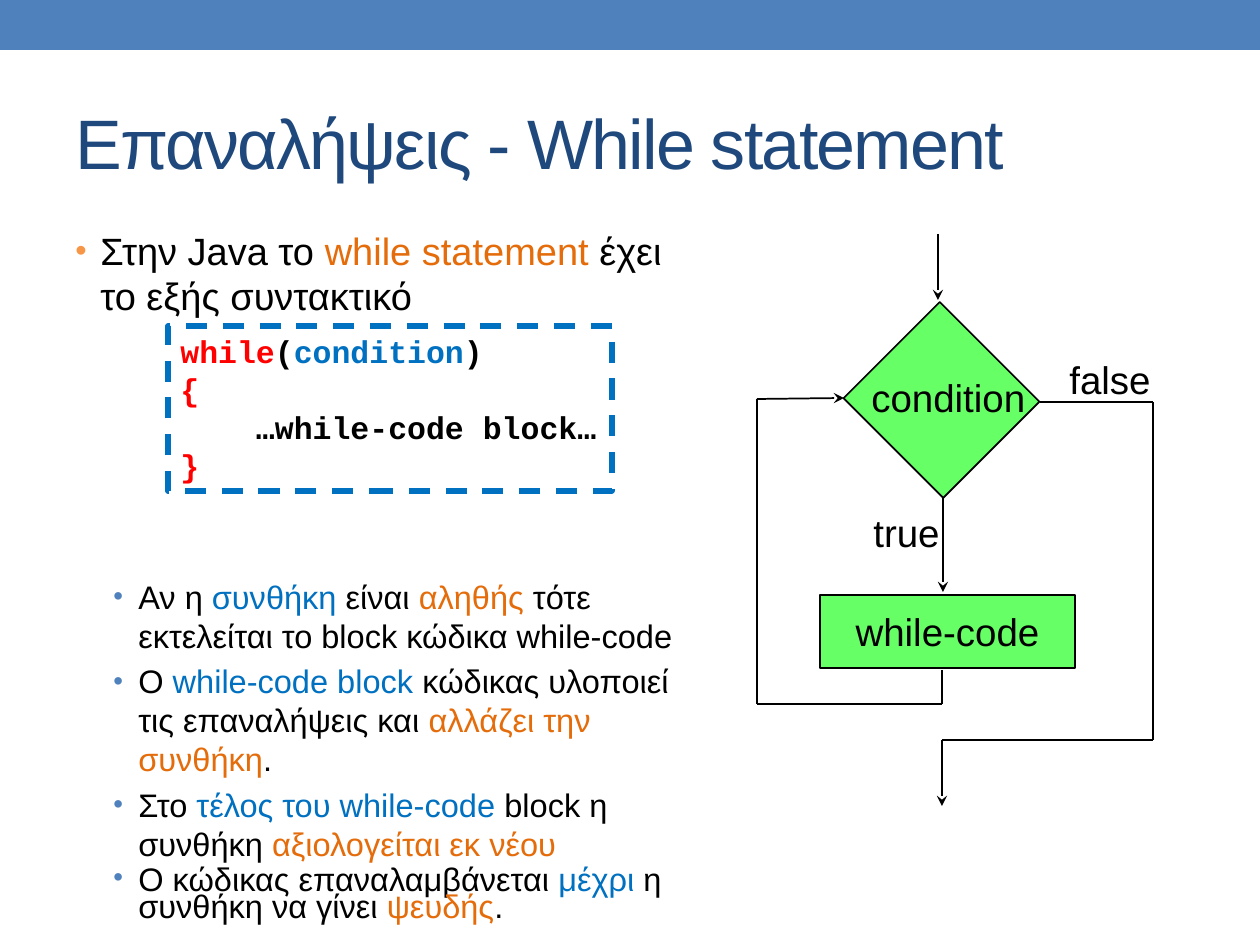
"""Build a slide on the while statement, with its syntax and flow chart."""
from lxml import etree
from pptx import Presentation, util as u
from pptx.dml.color import RGBColor
from pptx.enum import dml, shapes, text
from pptx.oxml.ns import qn

PX = 914400 / 126
COLORS = {"bar": "4F81BD", "title": "1F497D", "black": "000000", "orange": "E46C0A",
          "blue": "0070C0", "red": "FF0000", "green": "66FF66", "bullet": "F79646"}

TITLE = [[("Επαναλήψεις - While statement", "title")]]
INTRO = [("Στην Java το ", "black"), ("while statement ", "orange"),
         ("έχει το εξής συντακτικό", "black")]
POINTS = [
    [("Αν η ", "black"), ("συνθήκη", "blue"), (" είναι ", "black"), ("αληθής ", "orange"),
     ("τότε εκτελείται το block κώδικα while-code", "black")],
    [("O ", "black"), ("while-code block ", "blue"),
     ("κώδικας υλοποιεί τις επαναλήψεις και ", "black"),
     ("αλλάζει την συνθήκη", "orange"), (".", "black")],
    [("Στο ", "black"), ("τέλος του while-code ", "blue"), ("block η συνθήκη ", "black"),
     ("αξιολογείται εκ νέου", "orange")],
    [("Ο κώδικας επαναλαμβάνεται ", "black"), ("μέχρι", "blue"),
     (" η συνθήκη να γίνει ", "black"), ("ψευδής", "orange"), (".", "black")],
]
CODE = [
    [("while", "red"), ("(", "black"), ("condition", "blue"), (")", "black")],
    [("{", "red")],
    [("    …while-code block…", "black")],
    [("}", "red")],
]
LABELS = [("condition", (859, 368, 181, 59)), ("false", (1057, 350, 108, 59)),
          ("true", (861, 503, 93, 59))]
LINES = [
    ((1040, 402), (1153, 402)), ((1153, 402), (1153, 740)), ((1153, 740), (942, 740)),
    ((942, 670), (942, 704)), ((942, 704), (757, 704)), ((757, 704), (757, 399)),
]
ARROWS = [((938, 234), (938, 300)), ((943, 498), (943, 592)),
          ((757, 399), (844, 398)), ((942, 740), (942, 806))]


def px(n):
    return u.Emu(round(n * PX))


def rgb(name):
    return RGBColor.from_string(COLORS[name])


def write(s, paragraphs, size, font="Arial", bold=False, align="LEFT", anchor="TOP",
          wrap=True, tracking=None):
    tf = s.text_frame
    tf.word_wrap = wrap
    tf.vertical_anchor = getattr(text.MSO_ANCHOR, anchor)
    tf.margin_left = tf.margin_right = u.Inches(0.1)
    tf.margin_top = tf.margin_bottom = u.Inches(0.05)
    for i, runs in enumerate(paragraphs):
        p = tf.paragraphs[0] if i == 0 else tf.add_paragraph()
        p.alignment = getattr(text.PP_ALIGN, align)
        for words, color in runs:
            r = p.add_run()
            r.text = words
            r.font.name, r.font.size, r.font.bold = font, u.Pt(size), bold
            r.font.color.rgb = rgb(color)
            if tracking:
                r._r.get_or_add_rPr().set("spc", str(tracking * 100))
    return tf


def bullet(p, color, left, before):
    p.space_before = u.Pt(before)
    pPr = p._p.get_or_add_pPr()
    pPr.set("marL", str(px(left)))
    pPr.set("indent", str(px(-25)))
    clr = etree.SubElement(pPr, qn("a:buClr"))
    etree.SubElement(clr, qn("a:srgbClr"), val=COLORS[color])
    etree.SubElement(pPr, qn("a:buSzPct"), val="85000")
    etree.SubElement(pPr, qn("a:buFont"), typeface="Arial")
    etree.SubElement(pPr, qn("a:buChar"), char="•")


def textbox(slide, box):
    return slide.shapes.add_textbox(*map(px, box))


def rect(slide, box, fill=None, line=None, width=1):
    s = slide.shapes.add_shape(shapes.MSO_SHAPE.RECTANGLE, *map(px, box))
    s.shadow.inherit = False
    if fill:
        s.fill.solid()
        s.fill.fore_color.rgb = rgb(fill)
    else:
        s.fill.background()
    if line:
        s.line.color.rgb, s.line.width = rgb(line), u.Pt(width)
    else:
        s.line.fill.background()
    return s


def connect(slide, start, end, arrow=False):
    c = slide.shapes.add_connector(shapes.MSO_CONNECTOR.STRAIGHT, *map(px, start + end))
    c.line.color.rgb, c.line.width = rgb("black"), u.Pt(1)
    if arrow:
        etree.SubElement(c.line._get_or_add_ln(), qn("a:tailEnd"), type="stealth")
    etree.SubElement(c._element.spPr, qn("a:effectLst"))


def main():
    prs = Presentation()
    prs.slide_width, prs.slide_height = px(1260), px(945)
    slide = prs.slides.add_slide(prs.slide_layouts[6])

    rect(slide, (0, 0, 1260, 50), fill="bar")
    write(textbox(slide, (63, 73, 1134, 136)), TITLE, 40, anchor="MIDDLE", tracking=-1)

    tf = write(textbox(slide, (63, 221, 656, 672)), [INTRO] + POINTS, 18.6)
    intro, *points = tf.paragraphs
    for r in intro.runs:
        r.font.size = u.Pt(21.7)
    bullet(intro, "bullet", 25, 0)
    for i, p in enumerate(points):
        bullet(p, "bar", 63, 3.7 if i else 147.5)
    points[-1].line_spacing = 0.7

    code = rect(slide, (168, 326, 444, 165), line="blue", width=3)
    code.line.dash_style = dml.MSO_LINE.DASH
    write(code, CODE, 18, font="Courier New", bold=True, wrap=False)

    block = rect(slide, (820, 595, 255, 73), fill="green", line="black")
    write(block, [[("while-code", "black")]], 22, align="CENTER", anchor="MIDDLE", wrap=False)
    rect(slide, (871, 332, 141, 136), fill="green", line="black").rotation = 45
    for words, box in LABELS:
        write(textbox(slide, box), [[(words, "black")]], 22, wrap=False)

    for start, end in LINES:
        connect(slide, start, end)
    for start, end in ARROWS:
        connect(slide, start, end, arrow=True)

    prs.save("out.pptx")


if __name__ == "__main__":
    main()
